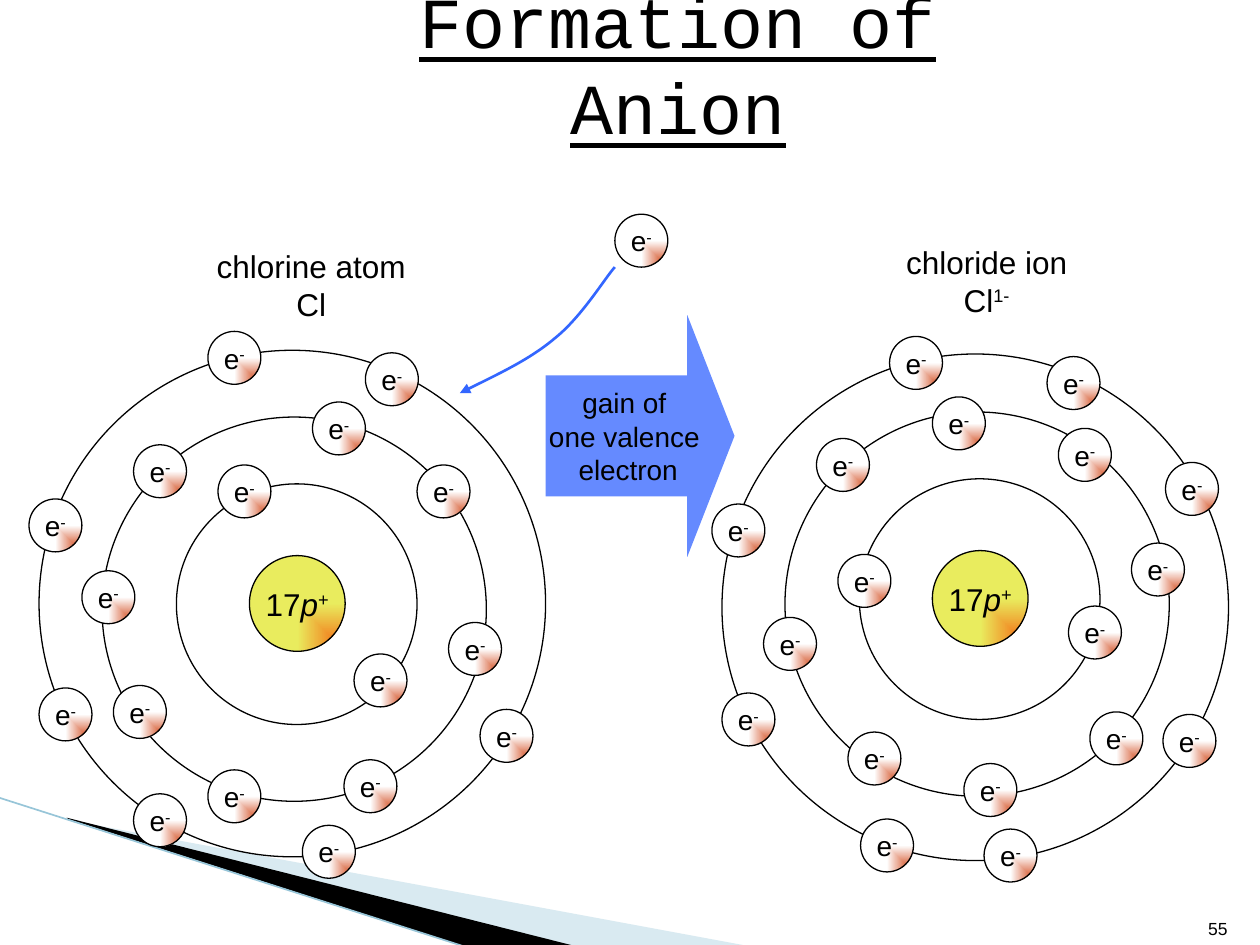
from lxml import etree
from pptx import Presentation
from pptx.dml.color import RGBColor
from pptx.enum.shapes import MSO_CONNECTOR, MSO_SHAPE
from pptx.enum.text import MSO_ANCHOR, PP_ALIGN
from pptx.oxml.ns import qn
from pptx.util import Pt

PX = 9144
OVAL, ARROW = MSO_SHAPE.OVAL, MSO_SHAPE.RIGHT_ARROW
STRAIGHT = MSO_CONNECTOR.STRAIGHT
TOP, MIDDLE, BOTTOM = MSO_ANCHOR.TOP, MSO_ANCHOR.MIDDLE, MSO_ANCHOR.BOTTOM
CENTER, RIGHT = PP_ALIGN.CENTER, PP_ALIGN.RIGHT
BLACK = "000000"
ELECTRON = [[("e", ""), ("-", "super")]]
PROTONS = [[("17", ""), ("p", "italic"), ("+", "super")]]


def color(value):
    return RGBColor.from_string(value)


class Slide:
    """Holds the text style and the current page, and draws each kind of element."""

    font = "Arial"

    def __init__(self, deck):
        self.page = deck.slides.add_slide(deck.slide_layouts[6])

    def fill_text(self, shape, lines, size, align=CENTER, anchor=MIDDLE, wrap=False,
                  font=font, underline=None):
        frame = shape.text_frame
        frame.word_wrap = wrap
        frame.vertical_anchor = anchor
        for index, line in enumerate(lines):
            para = frame.add_paragraph() if index else frame.paragraphs[0]
            para.alignment = align
            para.font.name = font
            para.font.size = Pt(size)
            para.font.color.rgb = color(BLACK)
            para.font.underline = underline
            for text, style in line:
                span = para.add_run()
                span.text = text
                if style == "italic":
                    span.font.italic = True
                elif style == "super":
                    span._r.get_or_add_rPr().set("baseline", "30000")

    def text(self, left, top, width, height, lines, size, **style):
        box = self.page.shapes.add_textbox(left * PX, top * PX, width * PX, height * PX)
        self.fill_text(box, lines, size, **style)

    def shape(self, kind, left, top, width, height, fill=None, line=None):
        shape = self.page.shapes.add_shape(kind, left * PX, top * PX, width * PX, height * PX)
        return self.paint(shape, fill, line)

    def paint(self, shape, fill=None, line=None, weight=0.75):
        shape.shadow.inherit = False
        if fill:
            shape.fill.solid()
            shape.fill.fore_color.rgb = color(fill)
        else:
            shape.fill.background()
        if line:
            shape.line.color.rgb = color(line)
            shape.line.width = Pt(weight)
        else:
            shape.line.fill.background()
        return shape

    def ball(self, left, top, diameter, inner, outer, lines, size):
        ball = self.shape(OVAL, left, top, diameter, diameter, line=BLACK)
        ball.fill.gradient()
        for stop, value in zip(ball.fill.gradient_stops, (inner, outer)):
            stop.color.rgb = color(value)
        gradient = ball._element.spPr.find(qn("a:gradFill"))
        gradient.remove(gradient.find(qn("a:lin")))
        shade = etree.SubElement(gradient, qn("a:path"), {"path": "rect"})
        etree.SubElement(shade, qn("a:fillToRect"), l="100000", t="100000")
        self.fill_text(ball, lines, size)

    def electron(self, left, top):
        self.ball(left, top, 42, "CC3300", "FFFFFF", ELECTRON, 16)

    def atom(self, rings, nucleus, electrons):
        for left, top, diameter in rings:
            self.shape(OVAL, left, top, diameter, diameter, line=BLACK)
        self.ball(*nucleus, 76, "F55F0B", "E9EC5E", PROTONS, 18)
        for place in electrons:
            self.electron(*place)

    def outline(self, points, closed=True, **paint):
        builder = self.page.shapes.build_freeform(*points[0], scale=PX)
        builder.add_line_segments(points[1:], close=closed)
        return self.paint(builder.convert_to_shape(), **paint)

    def wedge(self, points, fill, opacity=100):
        wedge = self.outline(points, fill=fill)
        tone = wedge._element.spPr.find(qn("a:solidFill"))[0]
        etree.SubElement(tone, qn("a:alpha"), val=str(opacity * 1000))

    def curved_arrow(self, points, line):
        curve = self.outline(points, closed=False, line=line, weight=1.5)
        track = next(curve._element.iter(qn("a:path")))
        steps = track.findall(qn("a:lnTo"))
        for start in range(0, len(steps), 3):
            bend = etree.SubElement(track, qn("a:cubicBezTo"))
            for step in steps[start:start + 3]:
                bend.append(step[0])
                track.remove(step)
        stroke = curve._element.spPr.find(qn("a:ln"))
        etree.SubElement(stroke, qn("a:headEnd"), type="triangle")

    def line(self, x1, y1, x2, y2, stroke, weight):
        line = self.page.shapes.add_connector(STRAIGHT, x1 * PX, y1 * PX, x2 * PX, y2 * PX)
        line.line.color.rgb = color(stroke)
        line.line.width = Pt(weight)
        etree.SubElement(line._element.spPr, qn("a:effectLst"))


def main():
    deck = Presentation()
    deck.slide_width, deck.slide_height = 1000 * PX, 750 * PX
    slide = Slide(deck)

    slide.wedge([(55, 651), (595, 751), (456, 751), (55, 650)], "A0CBDC", 40)
    slide.wedge([(53, 649), (457, 751), (372, 752), (54, 650)], BLACK)
    slide.line(-1, 633, 371, 752, "97C5D8", 0.95)
    slide.text(892, 701, 92, 49, [[("55", "")]], 10, align=RIGHT, anchor=BOTTOM, wrap=True)
    slide.text(243, 0, 590, 100, [[("Formation of Anion", "")]], 41, wrap=True,
               font="Courier New", underline=True)

    slide.atom(
        [(31, 278, 402), (81, 331, 305), (140, 384, 191)], (198, 441),
        [(173, 369), (281, 519),
         (248, 319), (331, 369), (106, 353), (65, 453),
         (90, 544), (165, 611), (273, 603), (356, 494),
         (106, 630), (381, 563), (240, 655), (31, 546),
         (23, 396), (165, 263), (290, 280)])
    slide.text(162, 191, 170, 70, [[("chlorine atom", "")], [("Cl", "")]], 18, anchor=TOP)

    slide.curved_arrow([(365, 312), (393, 298), (421, 285), (441, 268),
                        (462, 251), (480, 221), (488, 212)], "3366FF")
    slide.electron(488, 170)
    gain = slide.shape(ARROW, 433, 250, 150, 192, fill="658AFF")
    gain.adjustments[0], gain.adjustments[1] = 0.5, 0.25
    slide.fill_text(gain, [[("gain of ", "")], [("one valence ", "")], [("electron", "")]], 16)

    slide.text(709, 188, 148, 70, [[("chloride ion", "")], [("Cl", ""), ("1-", "super")]],
               18, anchor=TOP)
    slide.atom(
        [(573, 281, 402), (623, 327, 305), (682, 380, 191)], (740, 437),
        [(665, 440), (848, 481),
         (740, 315), (840, 340), (648, 348), (606, 490),
         (673, 581), (765, 606), (865, 565), (898, 431),
         (923, 567), (781, 658), (573, 550), (565, 400),
         (706, 267), (831, 283), (683, 650), (925, 367)])
    deck.save("out.pptx")


if __name__ == "__main__":
    main()
